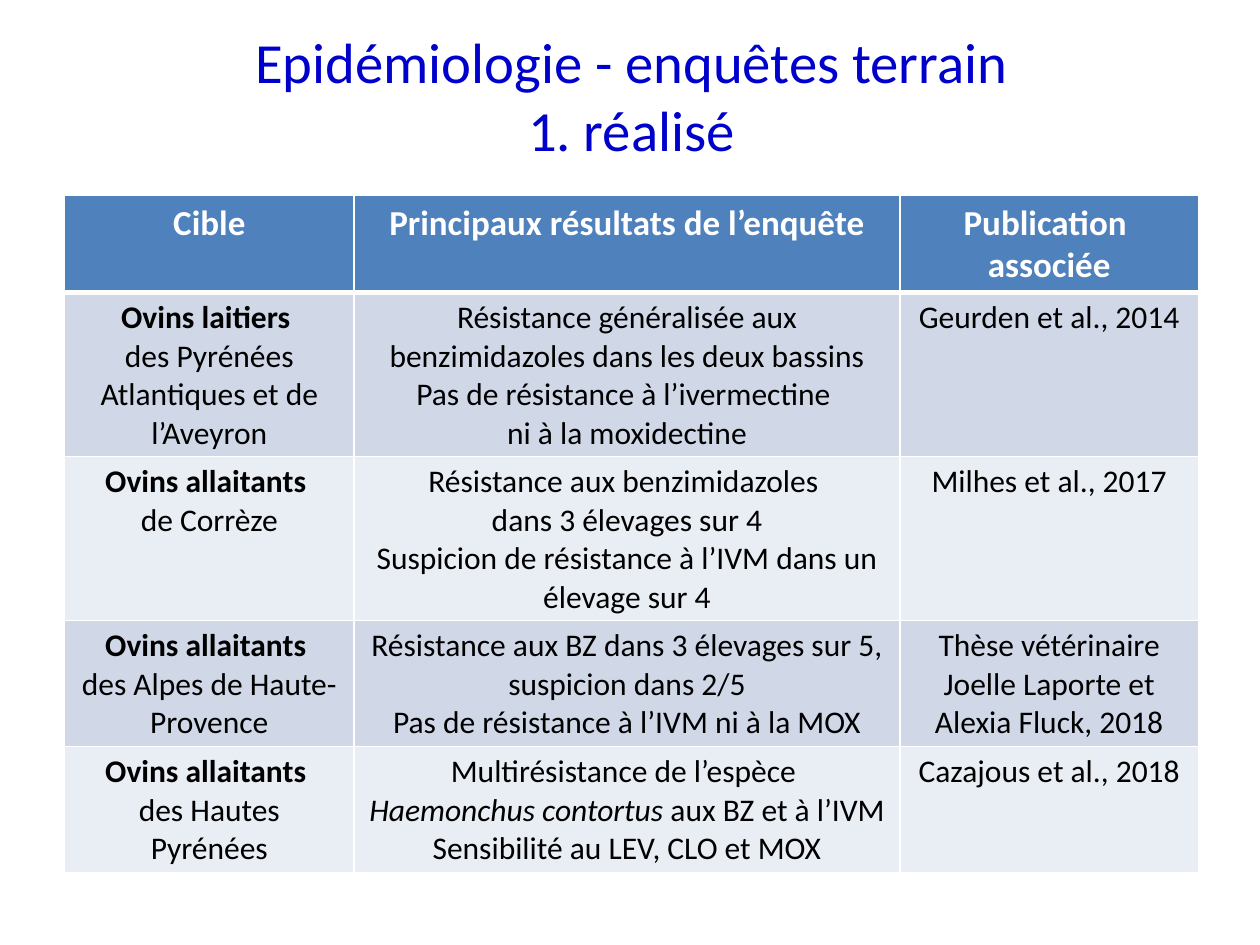
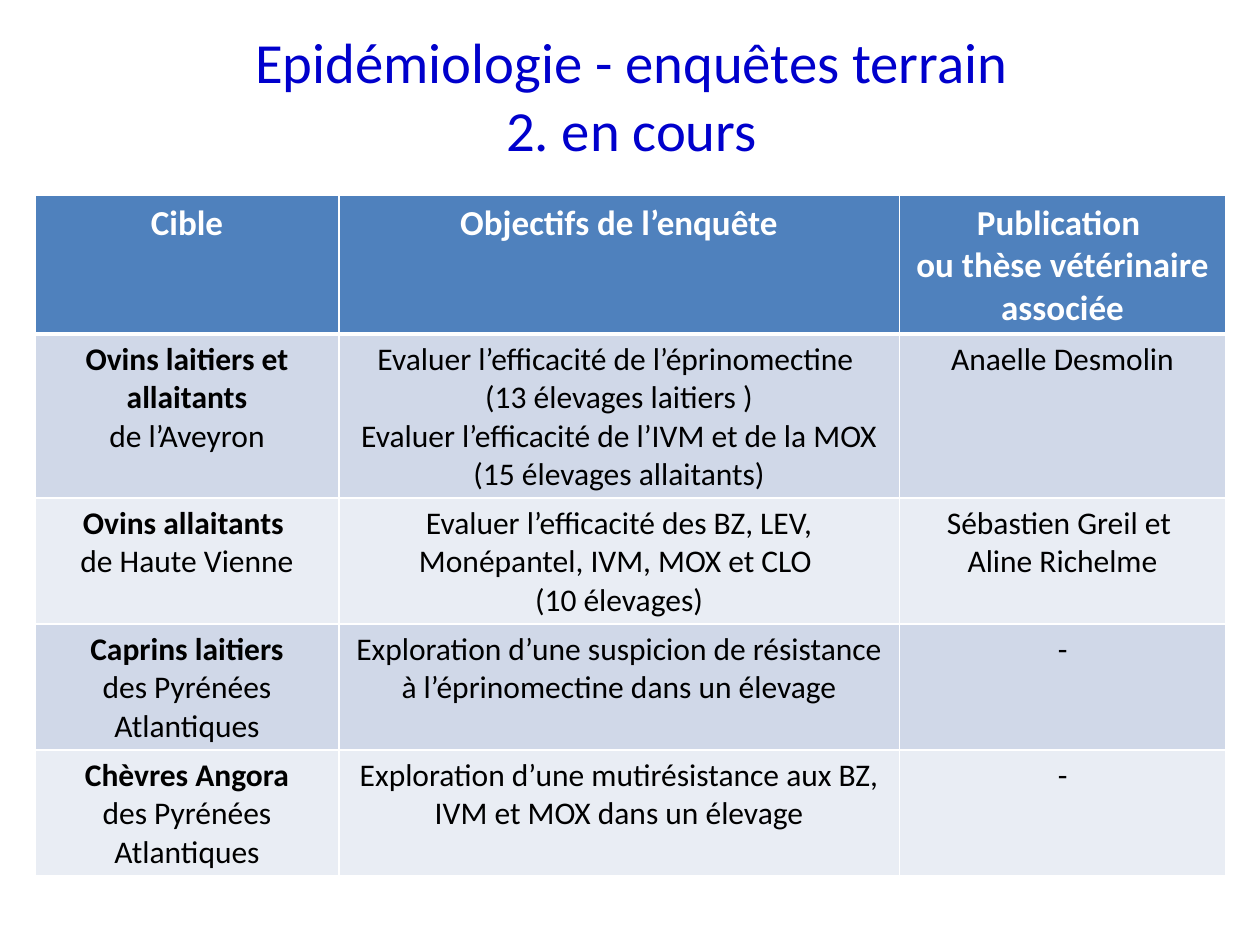
from lxml import etree
from pptx import Presentation
from pptx.dml.color import RGBColor
from pptx.enum.text import MSO_ANCHOR, PP_ALIGN
from pptx.oxml.ns import qn
from pptx.util import Cm, Pt

CENTER = PP_ALIGN.CENTER
TOP, MIDDLE = MSO_ANCHOR.TOP, MSO_ANCHOR.MIDDLE

TITLE_BLUE = RGBColor(0x00, 0x00, 0xCC)
HEADER_BLUE = RGBColor(0x4F, 0x81, 0xBD)
BANDS = (RGBColor(0xD0, 0xD8, 0xE8), RGBColor(0xE9, 0xED, 0xF4))
WHITE = RGBColor(0xFF, 0xFF, 0xFF)
BLACK = RGBColor(0x00, 0x00, 0x00)

FONT = "Calibri"
TITLE_FORMAT = {"name": FONT, "size": Pt(32.4)}
HEADER_FORMAT = {"name": FONT, "size": Pt(20), "bold": True}
BODY_FORMAT = {"name": FONT, "size": Pt(18), "bold": False}

TABLE_TOP = 3.94
ROW_HEIGHT = 1.96
THIN, THICK = Pt(1), Pt(3)

# In cells, a new line starts a paragraph and *…* marks italics.
SURVEYS = [
    {
        "title": "Epidémiologie - enquêtes terrain\n1. réalisé",
        "left": 1.3,
        "widths": (5.84, 11, 6.02),
        "rows": [
            ("Cible", "Principaux résultats de l’enquête", "Publication \nassociée"),
            ("Ovins laitiers \ndes Pyrénées Atlantiques et de l’Aveyron",
             "Résistance généralisée aux benzimidazoles dans les deux bassins\n"
             "Pas de résistance à l’ivermectine \nni à la moxidectine",
             "Geurden et al., 2014"),
            ("Ovins allaitants \nde Corrèze",
             "Résistance aux benzimidazoles \ndans 3 élevages sur 4\n"
             "Suspicion de résistance à l’IVM dans un élevage sur 4",
             "Milhes et al., 2017"),
            ("Ovins allaitants \ndes Alpes de Haute-Provence",
             "Résistance aux BZ dans 3 élevages sur 5, suspicion dans 2/5\n"
             "Pas de résistance à l’IVM ni à la MOX",
             "Thèse vétérinaire Joelle Laporte et Alexia Fluck, 2018"),
            ("Ovins allaitants \ndes Hautes Pyrénées",
             "Multirésistance de l’espèce \n"
             "*Haemonchus contortus *aux BZ et à l’IVM\n"
             "Sensibilité au LEV, CLO et MOX",
             "Cazajous et al., 2018"),
        ],
    },
    {
        "title": "Epidémiologie - enquêtes terrain\n2. en cours",
        "left": 0.71,
        "widths": (6.12, 11.3, 6.58),
        "rows": [
            ("Cible", "Objectifs de l’enquête",
             "Publication \nou thèse vétérinaire associée"),
            ("Ovins laitiers et allaitants\nde l’Aveyron",
             "Evaluer l’efficacité de l’éprinomectine \n(13 élevages laitiers )\n"
             "Evaluer l’efficacité de l’IVM et de la MOX (15 élevages allaitants)",
             "Anaelle Desmolin"),
            ("Ovins allaitants \nde Haute Vienne",
             "Evaluer l’efficacité des BZ, LEV, Monépantel, IVM, MOX et CLO \n"
             "(10 élevages)",
             "Sébastien Greil et \nAline Richelme"),
            ("Caprins laitiers\ndes Pyrénées Atlantiques",
             "Exploration d’une suspicion de résistance à l’éprinomectine "
             "dans un élevage",
             "-"),
            ("Chèvres Angora\ndes Pyrénées Atlantiques",
             "Exploration d’une mutirésistance aux BZ, IVM et MOX dans un élevage",
             "-"),
        ],
    },
]


class Deck:
    """Holds the shared style and the current slide."""

    def __init__(self):
        self.prs = Presentation()
        self.prs.slide_width, self.prs.slide_height = Cm(25.4), Cm(19.05)
        self.s = None

    def new_slide(self):
        self.s = self.prs.slides.add_slide(self.prs.slide_layouts[6])

    def style(self, r, color, formats):
        for key, value in formats.items():
            setattr(r.font, key, value)
        r.font.color.rgb = color

    def title(self, text):
        sp = self.s.shapes.add_textbox(Cm(1.3), Cm(0.33), Cm(22.86), Cm(3.18))
        tf = sp.text_frame
        tf.word_wrap = True
        tf.vertical_anchor = MIDDLE
        p = tf.paragraphs[0]
        p.text = text
        p.alignment = CENTER
        for r in p.runs:
            self.style(r, TITLE_BLUE, TITLE_FORMAT)

    def borders(self, cell, top, bottom):
        tcPr = cell._tc.get_or_add_tcPr()
        widths = {"a:lnL": THIN, "a:lnR": THIN, "a:lnT": top, "a:lnB": bottom}
        for tag, width in widths.items():
            ln = etree.SubElement(tcPr, qn(tag), w=str(width))
            fill = etree.SubElement(ln, qn("a:solidFill"))
            etree.SubElement(fill, qn("a:srgbClr"), val=str(WHITE))

    def cell_text(self, cell, text, color, formats, bold_first):
        tf = cell.text_frame
        for i, line in enumerate(text.split("\n")):
            p = tf.add_paragraph() if i else tf.paragraphs[0]
            p.alignment = CENTER
            for j, part in enumerate(line.split("*")):
                if part:
                    r = p.add_run()
                    r.text = part
                    self.style(r, color, formats)
                    r.font.italic = j % 2 == 1
                    if bold_first and i == 0:
                        r.font.bold = True

    def table(self, left, widths, rows):
        frame = self.s.shapes.add_table(
            len(rows), len(widths), Cm(left), Cm(TABLE_TOP),
            Cm(sum(widths)), Cm(ROW_HEIGHT * len(rows)))
        tbl = frame.table
        tbl.first_row = tbl.horz_banding = False
        for column, width in zip(tbl.columns, widths):
            column.width = Cm(width)
        for i, row in enumerate(rows):
            tbl.rows[i].height = Cm(ROW_HEIGHT)
            header = i == 0
            for j, text in enumerate(row):
                cell = tbl.cell(i, j)
                cell.vertical_anchor = TOP
                # The heavy rule lies between the header and the first row
                self.borders(cell, THICK if i == 1 else THIN,
                             THICK if header else THIN)
                cell.fill.solid()
                cell.fill.fore_color.rgb = HEADER_BLUE if header else BANDS[(i - 1) % 2]
                self.cell_text(cell, text, WHITE if header else BLACK,
                               HEADER_FORMAT if header else BODY_FORMAT, j == 0)


def main():
    deck = Deck()
    for survey in SURVEYS:
        deck.new_slide()
        deck.title(survey["title"])
        deck.table(survey["left"], survey["widths"], survey["rows"])
    deck.prs.save("out.pptx")


if __name__ == "__main__":
    main()
